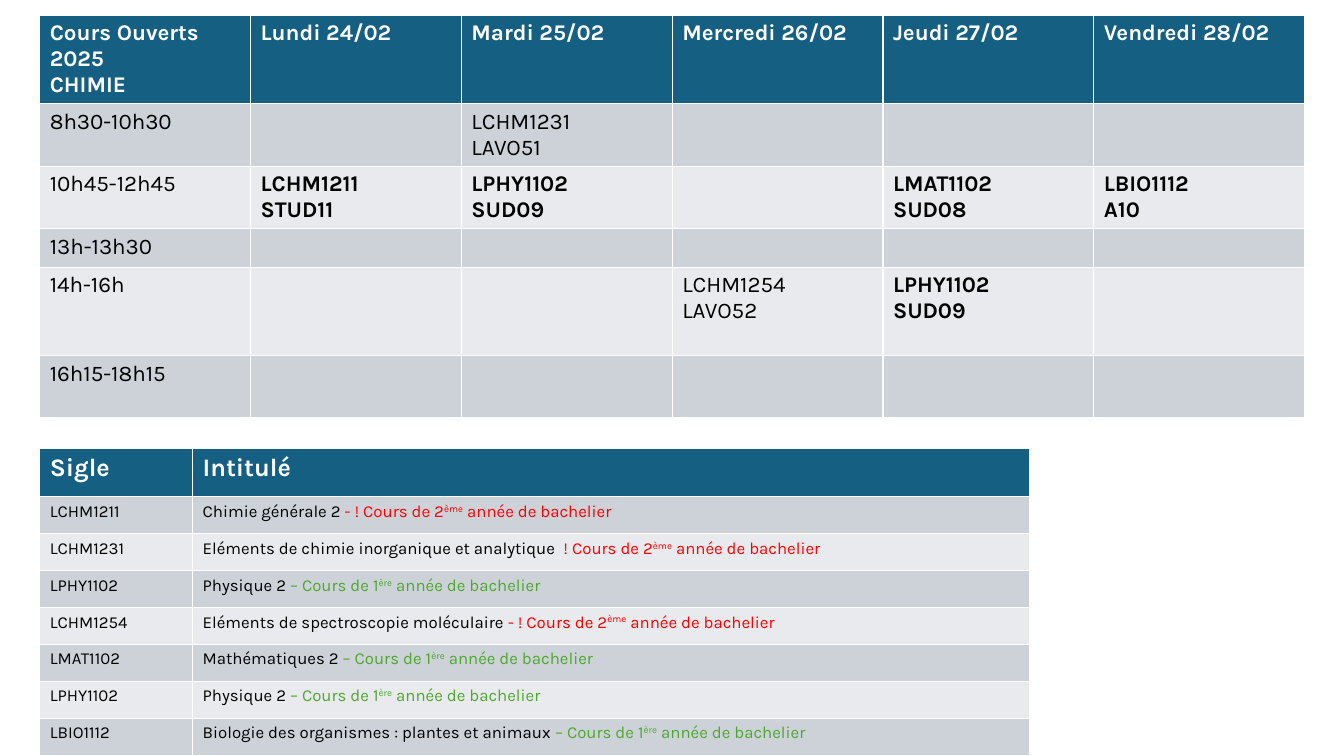
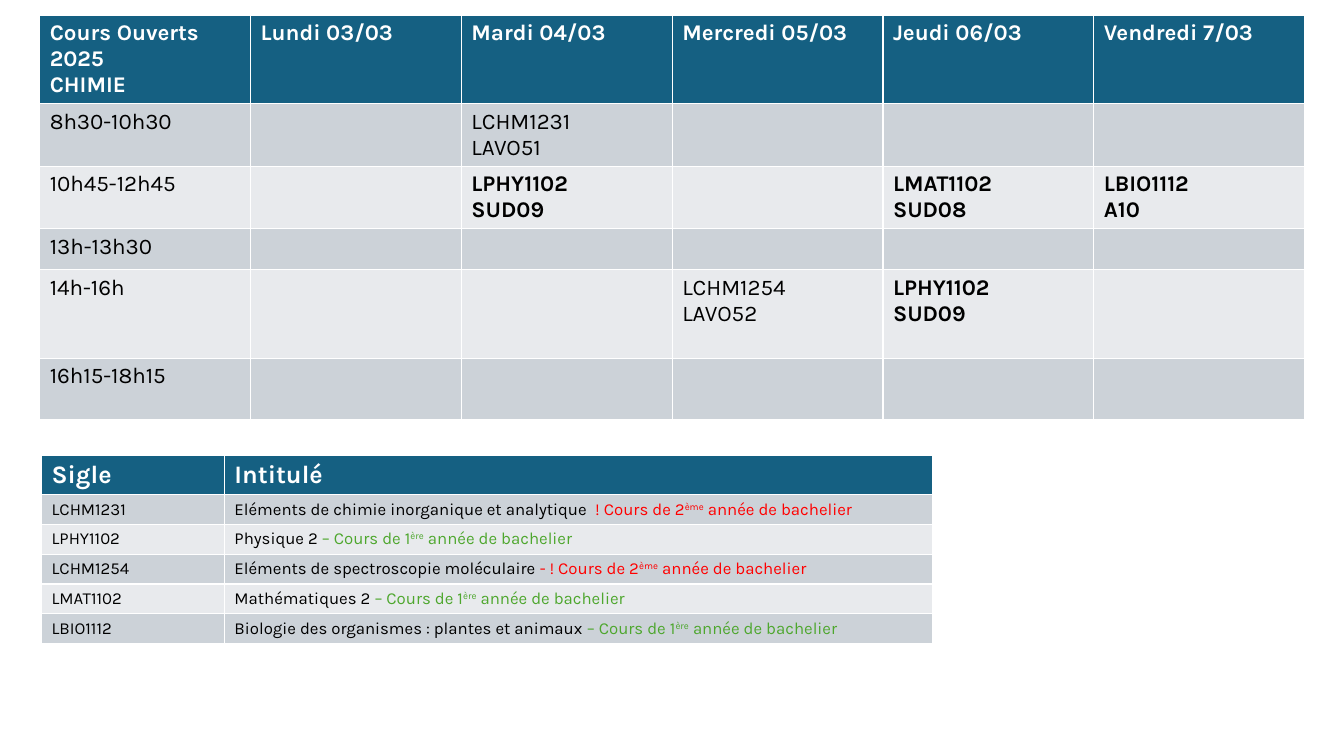
"""Build two weekly timetables of open chemistry courses."""

from dataclasses import dataclass

from pptx import Presentation
from pptx.dml.color import RGBColor
from pptx.slide import Slide
from pptx.table import Table, _Cell
from pptx.util import Pt

BLANK_LAYOUT = 6


@dataclass(frozen=True)
class Theme:
    """Colours, font and type sizes of the deck."""

    header: RGBColor = RGBColor(0x15, 0x60, 0x82)
    bands: tuple[RGBColor, RGBColor] = (RGBColor(0xCC, 0xD2, 0xD8), RGBColor(0xE8, 0xEA, 0xED))
    white: RGBColor = RGBColor(0xFF, 0xFF, 0xFF)
    black: RGBColor = RGBColor(0x00, 0x00, 0x00)
    first_year: RGBColor = RGBColor(0x4E, 0xA7, 0x2E)
    second_year: RGBColor = RGBColor(0xFF, 0x00, 0x00)
    font: str = "Karla"
    timetable_size: float = 16
    heading_size: float = 18
    course_size: float = 12


@dataclass(frozen=True)
class Year:
    """A year of study, with its ordinal ending and colour."""

    number: str
    ordinal: str
    color: RGBColor


@dataclass(frozen=True)
class Course:
    """A course title and the remark that leads to its year."""

    title: str
    remark: str
    year: Year


@dataclass(frozen=True)
class Session:
    """A course held in a room at a day and slot of the week."""

    day: int
    slot: int
    code: str
    room: str
    bold: bool = True


@dataclass(frozen=True)
class Grid:
    """Position, column widths and row heights of a table in points."""

    left: float
    top: float
    columns: list[float]
    rows: list[float]


@dataclass(frozen=True)
class Week:
    """One slide: the days, the sessions and the courses listed."""

    days: list[str]
    sessions: list[Session]
    lunch_height: float
    codes: list[str]
    course_grid: Grid


THEME = Theme()
FIRST = Year("1", "ère", THEME.first_year)
SECOND = Year("2", "ème", THEME.second_year)
COURSES = {
    "LCHM1211": Course("Chimie générale 2 ", "- ! Cours de ", SECOND),
    "LCHM1231": Course("Eléments de chimie inorganique et analytique ", " ! Cours de ", SECOND),
    "LPHY1102": Course("Physique 2 ", "– Cours de ", FIRST),
    "LCHM1254": Course("Eléments de spectroscopie moléculaire ", "- ! Cours de ", SECOND),
    "LMAT1102": Course("Mathématiques 2 ", "– Cours de ", FIRST),
    "LBIO1112": Course("Biologie des organismes : plantes et animaux ", "– Cours de ", FIRST),
}
SLOTS = ["8h30-10h30", "10h45-12h45", "13h-13h30", "14h-16h", "16h15-18h15"]
WEEKLY_SESSIONS = [
    Session(2, 1, "LCHM1231", "LAVO51", bold=False),
    Session(2, 2, "LPHY1102", "SUD09"),
    Session(4, 2, "LMAT1102", "SUD08"),
    Session(5, 2, "LBIO1112", "A10"),
    Session(3, 4, "LCHM1254", "LAVO52", bold=False),
    Session(4, 4, "LPHY1102", "SUD09"),
]
WEEKS = [
    Week(
        ["Lundi 24/02", "Mardi 25/02", "Mercredi 26/02", "Jeudi 27/02", "Vendredi 28/02"],
        [Session(1, 2, "LCHM1211", "STUD11"), *WEEKLY_SESSIONS],
        27.5,
        ["LCHM1211", "LCHM1231", "LPHY1102", "LCHM1254", "LMAT1102", "LPHY1102", "LBIO1112"],
        Grid(28.4, 320.2, [109.2, 597.6], [34.6] + [26.4] * 7),
    ),
    Week(
        ["Lundi 03/03", "Mardi 04/03", "Mercredi 05/03", "Jeudi 06/03", "Vendredi 7/03"],
        WEEKLY_SESSIONS,
        29.3,
        ["LCHM1231", "LPHY1102", "LCHM1254", "LMAT1102", "LBIO1112"],
        Grid(29.7, 325, [130.6, 505.8], [28.2] + [21.2] * 5),
    ),
]


def add_grid(slide: Slide, grid: Grid) -> Table:
    """Add a table with a dark header row and banded body rows."""
    table = slide.shapes.add_table(
        len(grid.rows), len(grid.columns),
        Pt(grid.left), Pt(grid.top), Pt(sum(grid.columns)), Pt(sum(grid.rows)),
    ).table
    for column, width in zip(table.columns, grid.columns):
        column.width = Pt(width)
    for index, (row, height) in enumerate(zip(table.rows, grid.rows)):
        row.height = Pt(height)
        for cell in row.cells:
            cell.fill.solid()
            cell.fill.fore_color.rgb = THEME.bands[(index - 1) % 2] if index else THEME.header
    return table


def write(cell: _Cell, text: str, size: float, color: RGBColor, bold: bool = False) -> None:
    """Write text in a cell and format its paragraphs."""
    cell.text = text
    for paragraph in cell.text_frame.paragraphs:
        font = paragraph.font
        font.name, font.size, font.bold = THEME.font, Pt(size), bold
        font.color.rgb = color


def write_course(cell: _Cell, course: Course) -> None:
    """Write a course title followed by its coloured year remark."""
    write(cell, course.title, THEME.course_size, THEME.black)
    paragraph = cell.text_frame.paragraphs[0]
    year = course.year
    for text, raised in (
        (course.remark + year.number, False),
        (year.ordinal, True),
        (" année de bachelier", False),
    ):
        run = paragraph.add_run()
        run.text = text
        run.font.color.rgb = year.color
        if raised:
            run._r.get_or_add_rPr().set("baseline", "30000")


def add_timetable(slide: Slide, week: Week) -> None:
    """Add the timetable of days and slots."""
    heights = [63.2, 44.6, 44.6, week.lunch_height, 63.2, 44.2]
    table = add_grid(slide, Grid(28.4, 10.7, [150.6] * 6, heights))
    sessions = {(session.slot, session.day): session for session in week.sessions}
    for day, heading in enumerate(["Cours Ouverts 2025\nCHIMIE", *week.days]):
        write(table.cell(0, day), heading, THEME.timetable_size, THEME.white, bold=True)
    for slot, hours in enumerate(SLOTS, start=1):
        write(table.cell(slot, 0), hours, THEME.timetable_size, THEME.black)
        for day in range(1, len(week.days) + 1):
            session = sessions.get((slot, day))
            text = f"{session.code}\v{session.room}" if session else ""
            bold = session.bold if session else False
            write(table.cell(slot, day), text, THEME.timetable_size, THEME.black, bold)


def add_course_list(slide: Slide, week: Week) -> None:
    """Add the table of course codes and titles."""
    table = add_grid(slide, week.course_grid)
    for column, heading in enumerate(["Sigle", "Intitulé"]):
        write(table.cell(0, column), heading, THEME.heading_size, THEME.white, bold=True)
    for row, code in enumerate(week.codes, start=1):
        write(table.cell(row, 0), code, THEME.course_size, THEME.black)
        write_course(table.cell(row, 1), COURSES[code])


def main() -> None:
    """Build and save the deck."""
    deck = Presentation()
    deck.slide_width, deck.slide_height = Pt(960), Pt(540)
    for week in WEEKS:
        slide = deck.slides.add_slide(deck.slide_layouts[BLANK_LAYOUT])
        add_timetable(slide, week)
        add_course_list(slide, week)
    deck.save("out.pptx")


if __name__ == "__main__":
    main()
